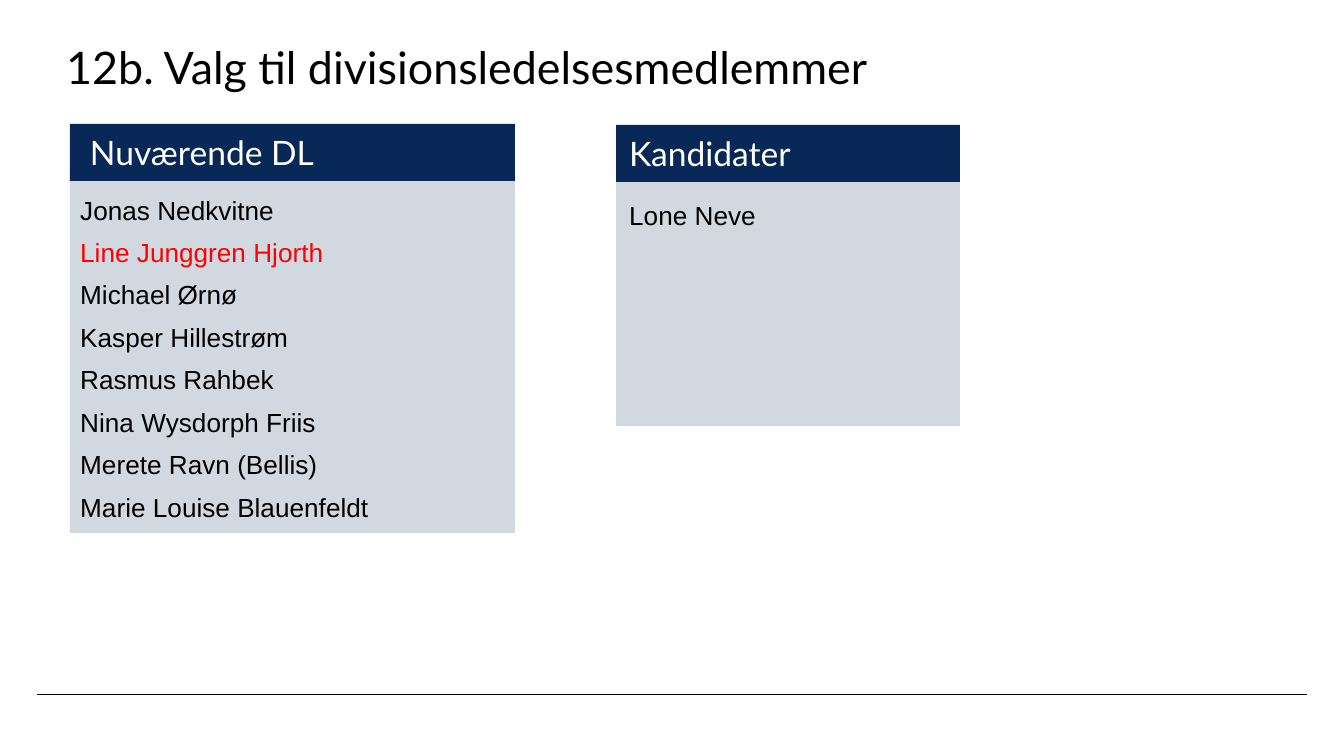
from lxml import etree
from pptx import Presentation
from pptx import util as u
from pptx.dml.color import RGBColor
from pptx.enum import shapes, text
from pptx.oxml.ns import qn

SCALE = 914400 / 134.4
NAVY = "082957"
BLACK = "000000"
WHITE = "FFFFFF"
RED = "FF0000"
MEMBERS = [
    ("Jonas Nedkvitne", BLACK),
    ("Line Junggren Hjorth", RED),
    ("Michael Ørnø", BLACK),
    ("Kasper Hillestrøm", BLACK),
    ("Rasmus Rahbek", BLACK),
    ("Nina Wysdorph Friis", BLACK),
    ("Merete Ravn (Bellis)", BLACK),
    ("Marie Louise Blauenfeldt", BLACK),
]


def px(n):
    return u.Emu(round(n * SCALE))


def color(code):
    return RGBColor.from_string(code)


def style(para, face, size, code):
    para.font.name = face
    para.font.size = u.Pt(size)
    para.font.color.rgb = color(code)


def add_rect(slide, box, alpha=None):
    rect = slide.shapes.add_shape(shapes.MSO_SHAPE.RECTANGLE, *map(px, box))
    rect.shadow.inherit = False
    rect.fill.solid()
    rect.fill.fore_color.rgb = color(NAVY)
    rect.line.fill.background()
    if alpha:
        tone = rect.fill._xPr.find(".//" + qn("a:srgbClr"))
        etree.SubElement(tone, qn("a:alpha"), val=str(alpha * 1000))
    return rect


def add_head(slide, box, label, inset):
    frame = add_rect(slide, box).text_frame
    frame.margin_left = px(inset)
    frame.vertical_anchor = text.MSO_ANCHOR.MIDDLE
    para = frame.paragraphs[0]
    para.text = label
    para.alignment = text.PP_ALIGN.LEFT
    style(para, "Lato", 18, WHITE)


def add_text(slide, box):
    frame = slide.shapes.add_textbox(*map(px, box)).text_frame
    frame.word_wrap = True
    return frame


def add_title(slide, box, label):
    para = add_text(slide, box).paragraphs[0]
    para.text = label
    style(para, "Lato", 24, BLACK)


def add_names(slide, box, names):
    frame = add_text(slide, box)
    for i, (name, code) in enumerate(names):
        para = frame.add_paragraph() if i else frame.paragraphs[0]
        para.text = name
        para.line_spacing = 1.3
        para.space_after = u.Pt(0.9)
        style(para, "Arial", 14, code)


def add_rule(slide, left, right, top):
    rule = slide.shapes.add_connector(
        shapes.MSO_CONNECTOR.STRAIGHT, px(left), px(top), px(right), px(top))
    rule.line.color.rgb = color(BLACK)
    rule.line.width = u.Pt(0.25)
    etree.SubElement(rule._element.spPr, qn("a:effectLst"))


def main():
    deck = Presentation()
    deck.slide_width, deck.slide_height = px(1344), px(756)
    slide = deck.slides.add_slide(deck.slide_layouts[6])
    add_rule(slide, 37, 1307, 694)
    add_title(slide, (53, 33, 1210, 63), "12b. Valg til divisionsledelsesmedlemmer")
    add_head(slide, (70, 124, 445, 57), "Nuværende DL", 20)
    add_rect(slide, (70, 171, 445, 362), 18)
    add_names(slide, (67, 178, 435, 372), MEMBERS)
    add_head(slide, (616, 125, 344, 57), "Kandidater", 13)
    add_rect(slide, (616, 182, 344, 244), 18)
    add_names(slide, (616, 183, 331, 116), [("Lone Neve", BLACK)])
    deck.save("out.pptx")


if __name__ == "__main__":
    main()
